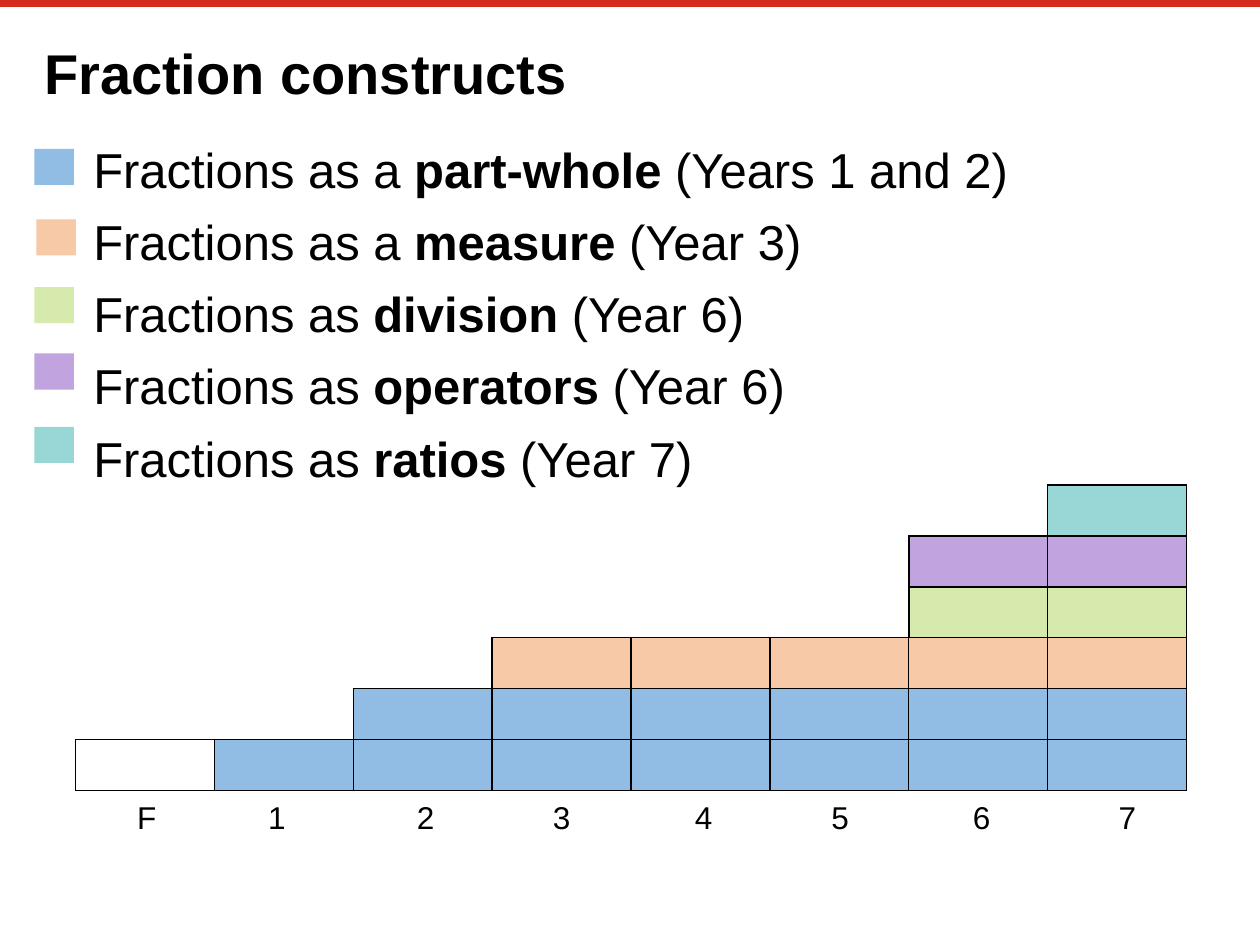
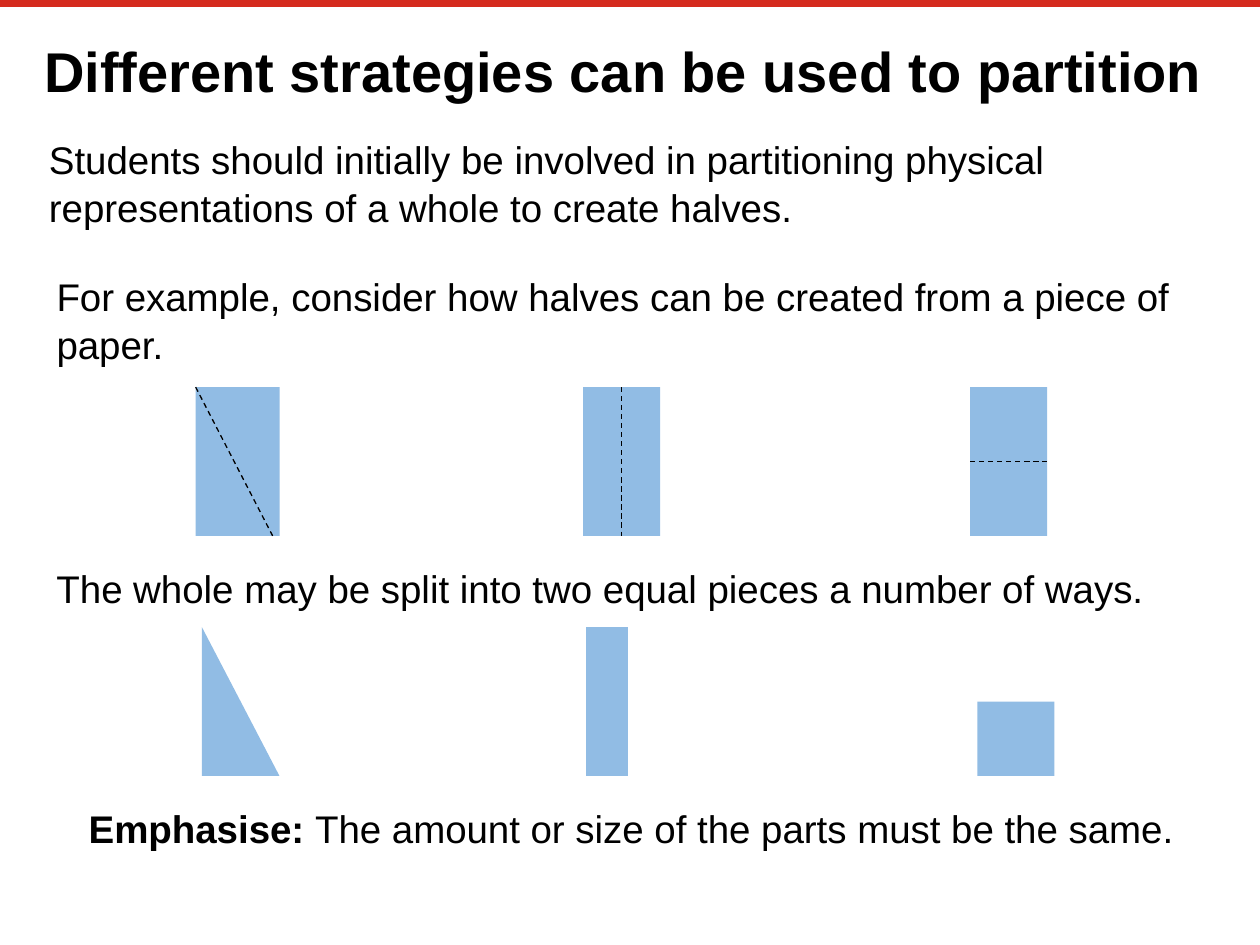
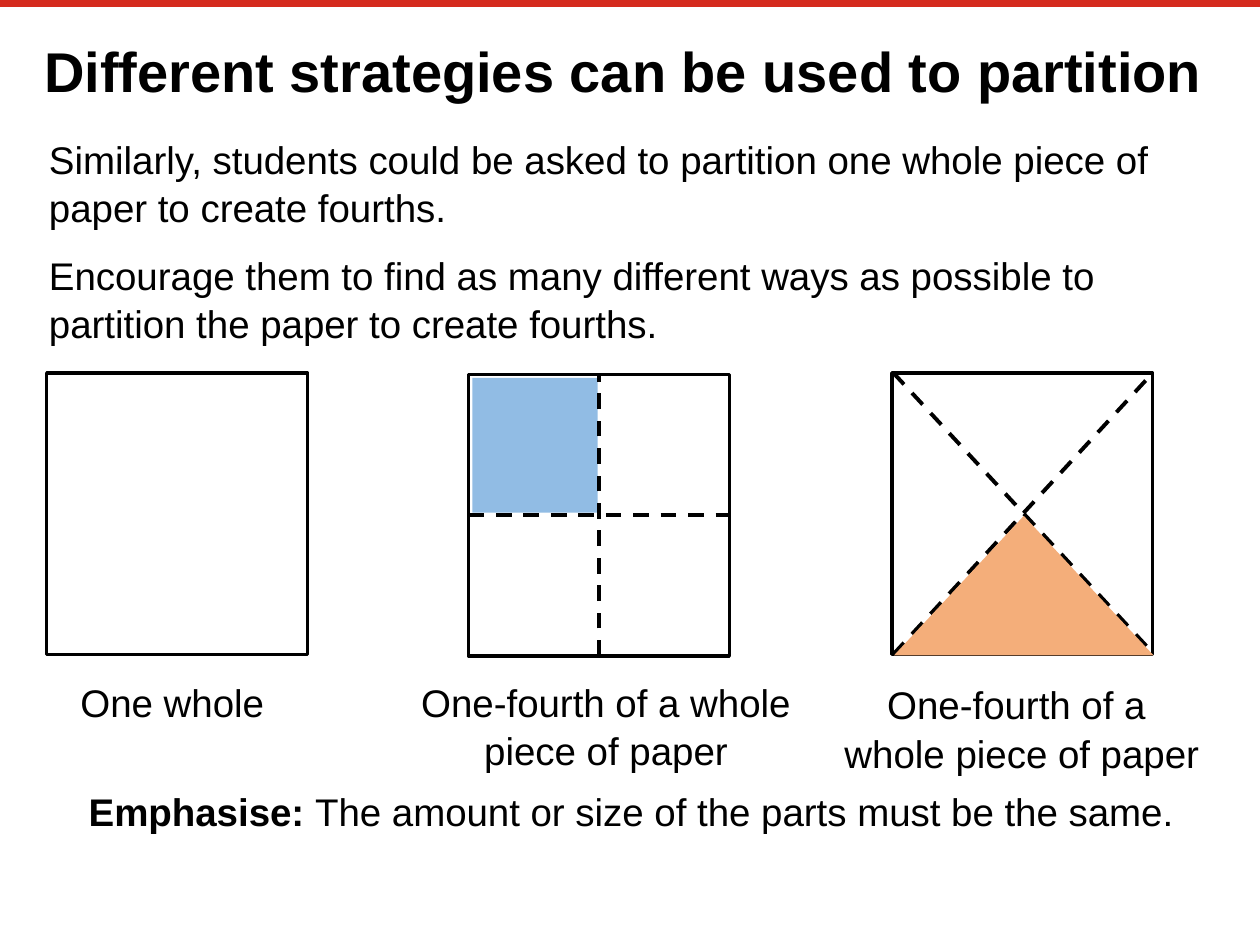
from typing import NamedTuple, Optional

from lxml import etree
from pptx import Presentation
from pptx.dml.color import RGBColor
from pptx.enum.dml import MSO_LINE_DASH_STYLE as Dash
from pptx.enum.shapes import MSO_CONNECTOR_TYPE as Connector
from pptx.enum.shapes import MSO_SHAPE as Preset
from pptx.enum.text import PP_ALIGN as Align
from pptx.oxml.ns import qn
from pptx.util import Pt

COLORS = {
    "red": "D52B1E",
    "black": "000000",
    "white": "FFFFFF",
    "blue": "91BCE4",
    "peach": "F7C9A6",
    "orange": "F4AE7A",
    "green": "D6EAAD",
    "purple": "C1A3E0",
    "teal": "99D6D6",
}
FONT = "Arial"
SLIDE_WIDTH, SLIDE_HEIGHT = 720, 540
LINE_SPACING = 1.05

YEAR_COUNT = 8
YEAR_WIDTH = 79.35
CHART_LEFT, CHART_BASE = 43.2, 422.6
BLOCK_HEIGHT = 29.1

EMPHASIS = "**Emphasise: **The amount or size of the parts must be the same."
STRATEGIES_TITLE = "Different strategies can be used to partition"


class Frame(NamedTuple):
    left: float
    top: float
    width: float
    height: float


class TextStyle(NamedTuple):
    size: float = 22
    align: Align = Align.LEFT
    space_before: float = 11
    indent: float = 0
    inset: bool = True
    wrap: bool = True


class Construct(NamedTuple):
    text: str
    color: str
    swatch_left: float
    swatch_top: float


class Level(NamedTuple):
    """One row of blocks, running from first_year to the last year."""
    first_year: int
    color: str


class Block(NamedTuple):
    frame: Frame
    color: str = "blue"
    preset: Preset = Preset.RECTANGLE
    outline: float = 0
    apex: Optional[float] = None


class Line(NamedTuple):
    x1: float
    y1: float
    x2: float
    y2: float
    width: float
    color: str = "black"
    dashed: bool = True


BODY = TextStyle()
CENTERED = TextStyle(align=Align.CENTER)
TITLE = TextStyle(size=32, inset=False)
CONSTRUCT_LIST = TextStyle(size=28, space_before=6, indent=28.1, inset=False)
YEAR_LABEL = TextStyle(size=18, wrap=False)

CONSTRUCTS = [
    Construct("Fractions as a **part-whole **(Years 1 and 2)", "blue", 19.6, 85),
    Construct("Fractions as a **measure **(Year 3)", "peach", 20.8, 125.4),
    Construct("Fractions as **division **(Year 6)", "green", 19.6, 164),
    Construct("Fractions as **operators **(Year 6)", "purple", 19.6, 202),
    Construct("Fractions as **ratios **(Year 7)", "teal", 19.6, 243.9),
]
LEVELS = [
    Level(0, "blue"),
    Level(2, "blue"),
    Level(3, "peach"),
    Level(6, "green"),
    Level(6, "purple"),
    Level(7, "teal"),
]
YEAR_LABELS = {"F": 71.3, "1": 146.2, "2": 231.1, "3": 308.9,
               "4": 390, "5": 468, "6": 548.9, "7": 632.2}


def rgb(name: str) -> RGBColor:
    return RGBColor.from_string(COLORS[name])


def add_text(slide, frame: Frame, paragraphs: list[str], style: TextStyle = BODY) -> None:
    """Write paragraphs; text between double asterisks is bold."""
    box = slide.shapes.add_textbox(*map(Pt, frame))
    text_frame = box.text_frame
    text_frame.word_wrap = style.wrap
    if not style.inset:
        text_frame.margin_left = text_frame.margin_right = 0
        text_frame.margin_top = text_frame.margin_bottom = 0
    for index, text in enumerate(paragraphs):
        paragraph = text_frame.add_paragraph() if index else text_frame.paragraphs[0]
        paragraph.alignment = style.align
        paragraph.line_spacing = LINE_SPACING
        if index:
            paragraph.space_before = Pt(style.space_before)
        if style.indent:
            paragraph._p.get_or_add_pPr().set("indent", str(Pt(style.indent)))
        paragraph.font.name = FONT
        paragraph.font.size = Pt(style.size)
        paragraph.font.color.rgb = rgb("black")
        for part_index, part in enumerate(text.split("**")):
            if not part:
                continue
            bold = part_index % 2 == 1
            for line_index, line in enumerate(part.split("\n")):
                if line_index:
                    paragraph.add_line_break()
                run = paragraph.add_run()
                run.text = line
                run.font.bold = bold


def add_block(slide, block: Block) -> None:
    shape = slide.shapes.add_shape(block.preset, *map(Pt, block.frame))
    shape.shadow.inherit = False
    shape.fill.solid()
    shape.fill.fore_color.rgb = rgb(block.color)
    if block.outline:
        shape.line.color.rgb = rgb("black")
        shape.line.width = Pt(block.outline)
    else:
        shape.line.fill.background()
    if block.apex is not None:
        shape.adjustments[0] = block.apex


def add_line(slide, line: Line) -> None:
    ends = map(Pt, (line.x1, line.y1, line.x2, line.y2))
    connector = slide.shapes.add_connector(Connector.STRAIGHT, *ends)
    connector.line.color.rgb = rgb(line.color)
    connector.line.width = Pt(line.width)
    if line.dashed:
        connector.line.dash_style = Dash.DASH
    etree.SubElement(connector._element.spPr, qn("a:effectLst"))


def add_cell_borders(cell) -> None:
    properties = cell._tc.get_or_add_tcPr()
    for side in ("a:lnL", "a:lnR", "a:lnT", "a:lnB"):
        border = etree.SubElement(properties, qn(side), w=str(Pt(1)))
        fill = etree.SubElement(border, qn("a:solidFill"))
        etree.SubElement(fill, qn("a:srgbClr"), val=COLORS["black"])


def add_level(slide, level: Level, index: int) -> None:
    count = YEAR_COUNT - level.first_year
    frame = Frame(CHART_LEFT + level.first_year * YEAR_WIDTH,
                  CHART_BASE - index * BLOCK_HEIGHT,
                  count * YEAR_WIDTH, BLOCK_HEIGHT)
    table = slide.shapes.add_table(1, count, *map(Pt, frame)).table
    table.first_row = table.horz_banding = False
    for column in table.columns:
        column.width = Pt(YEAR_WIDTH)
    for year, cell in enumerate(table.iter_cells(), level.first_year):
        cell.margin_top = cell.margin_bottom = 0
        add_cell_borders(cell)
        if year == 0:
            cell.fill.background()
        else:
            cell.fill.solid()
            cell.fill.fore_color.rgb = rgb(level.color)


def add_titled_slide(presentation, title: str, title_top: float = 18.7):
    slide = presentation.slides.add_slide(presentation.slide_layouts[6])
    add_line(slide, Line(0, 2, SLIDE_WIDTH, 2, 4.2, "red", dashed=False))
    add_text(slide, Frame(25.2, title_top, 668.9, 34.6), [f"**{title}**"], TITLE)
    return slide


def add_emphasis(slide, top: float) -> None:
    add_text(slide, Frame(20.9, top, 679.7, 33.8), [EMPHASIS], CENTERED)


def build_constructs(presentation) -> None:
    slide = add_titled_slide(presentation, "Fraction constructs", 20.2)
    add_text(slide, Frame(25.2, 77.8, 668.2, 396.7),
             [construct.text for construct in CONSTRUCTS], CONSTRUCT_LIST)
    for construct in CONSTRUCTS:
        swatch = Frame(construct.swatch_left, construct.swatch_top, 22.6, 20.6)
        add_block(slide, Block(swatch, construct.color))
    for index, level in enumerate(LEVELS):
        add_level(slide, level, index)
    for label, left in YEAR_LABELS.items():
        add_text(slide, Frame(left, 451.3, 24.5, 28.8), [label], YEAR_LABEL)


def build_halves(presentation) -> None:
    slide = add_titled_slide(presentation, STRATEGIES_TITLE)
    add_text(slide, Frame(20.9, 72.7, 668.9, 60.5), [
        "Students should initially be involved in partitioning physical "
        "representations of a whole to create halves."])
    add_text(slide, Frame(25.2, 151.2, 668.9, 60.5), [
        "For example, consider how halves can be created from a piece of paper."])
    add_text(slide, Frame(25.2, 318.2, 674.6, 33.8), [
        "The whole may be split into two equal pieces a number of ways."])

    width, height, top = 44, 85, 221.2
    bottom, middle = top + height, top + height / 2
    diagonal, upright, level = 111.8, 333.2, 554.4
    half_top = 358.4
    for block in (
        Block(Frame(diagonal, top, 48, height)),
        Block(Frame(upright, top, width, height)),
        Block(Frame(level, top, width, height)),
        Block(Frame(115.4, half_top, 44.3, height), preset=Preset.ISOSCELES_TRIANGLE, apex=0),
        Block(Frame(335, half_top, 23.8, height)),
        Block(Frame(558.5, half_top + height / 2, width, height / 2)),
    ):
        add_block(slide, block)
    center = upright + width / 2
    for line in (
        Line(diagonal, top, diagonal + width, bottom, 0.75),
        Line(center, top, center, bottom, 0.75),
        Line(level, middle, level + width, middle, 0.75),
    ):
        add_line(slide, line)
    add_emphasis(slide, 455)


def build_fourths(presentation) -> None:
    slide = add_titled_slide(presentation, STRATEGIES_TITLE)
    add_text(slide, Frame(20.9, 72.7, 668.9, 127.4), [
        "Similarly, students could be asked to partition one whole piece of "
        "paper to create fourths.",
        "Encourage them to find as many different ways as possible to "
        "partition the paper to create fourths."])

    width, height, top = 149, 160.8, 213.1
    whole, quarters, triangles = 26.7, 267.8, 509.7
    quarters_top = top + 0.9
    bottom = top + height
    for left, paper_top in ((whole, top), (quarters, quarters_top), (triangles, top)):
        add_block(slide, Block(Frame(left, paper_top, width, height), "white", outline=2))

    add_block(slide, Block(Frame(quarters + 2.2, quarters_top + 2, 71.5, 77)))
    center, middle = quarters + width / 2, quarters_top + height / 2
    right = triangles + width
    for line in (
        Line(center, quarters_top + height, center, quarters_top, 2.25),
        Line(quarters, middle, quarters + width, middle, 2.25),
        Line(triangles + 0.8, top, right + 0.8, bottom, 2.25),
        Line(triangles + 0.8, bottom, right, top, 2.25),
    ):
        add_line(slide, line)
    add_block(slide, Block(Frame(triangles + 1.2, 294.8, 148.3, 79.7), "orange",
                           Preset.ISOSCELES_TRIANGLE))

    add_text(slide, Frame(38.9, 383, 125.3, 33.8), ["One whole"])
    add_text(slide, Frame(223.9, 383, 244.8, 60.5),
             ["One-fourth of a whole piece of paper"], CENTERED)
    add_text(slide, Frame(461.5, 384.5, 244.8, 60.5),
             ["One-fourth of a \nwhole piece of paper"], CENTERED)
    add_emphasis(slide, 445.7)


def main() -> None:
    presentation = Presentation()
    presentation.slide_width = Pt(SLIDE_WIDTH)
    presentation.slide_height = Pt(SLIDE_HEIGHT)
    build_constructs(presentation)
    build_halves(presentation)
    build_fourths(presentation)
    presentation.save("out.pptx")


if __name__ == "__main__":
    main()
